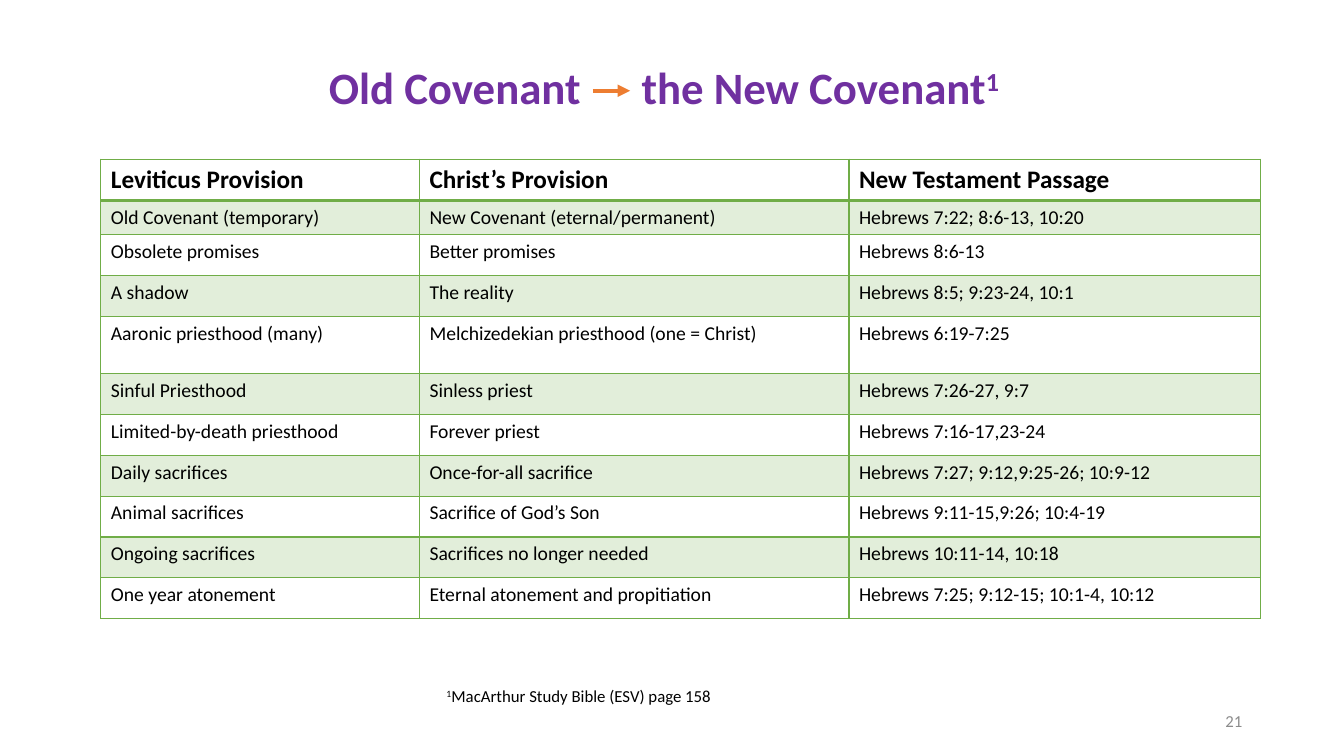
from lxml import etree
from pptx import Presentation
from pptx.dml.color import RGBColor
from pptx.enum.shapes import MSO_CONNECTOR
from pptx.enum.text import MSO_ANCHOR, MSO_AUTO_SIZE, PP_ALIGN
from pptx.oxml.ns import qn
from pptx.util import Inches, Pt

LINE = MSO_CONNECTOR.STRAIGHT
TOP, MIDDLE = MSO_ANCHOR.TOP, MSO_ANCHOR.MIDDLE
LEFT, CENTER, RIGHT = PP_ALIGN.LEFT, PP_ALIGN.CENTER, PP_ALIGN.RIGHT
FIT, FIXED = MSO_AUTO_SIZE.SHAPE_TO_FIT_TEXT, MSO_AUTO_SIZE.NONE

GREEN, PURPLE, ORANGE = "70AD47", "7030A0", "ED7D31"
BLACK, GRAY = "000000", "8C8C8C"

TITLE = {"size": Pt(32), "bold": True, "name": "Calibri"}
HEAD = {"size": Pt(18), "bold": True, "name": "Calibri"}
BODY = {"size": Pt(14), "bold": False, "name": "Calibri"}
SMALL = {"size": Pt(12), "bold": False, "name": "Calibri"}
RAISED = {"baseline": "30000"}
WIDE = {"spc": "3600"}

ROWS = [
    ("Leviticus Provision", "Christ’s Provision", "New Testament Passage"),
    ("Old Covenant (temporary)", "New Covenant (eternal/permanent)",
     "Hebrews 7:22; 8:6-13, 10:20"),
    ("Obsolete promises", "Better promises", "Hebrews 8:6-13"),
    ("A shadow", "The reality", "Hebrews 8:5; 9:23-24, 10:1"),
    ("Aaronic priesthood (many)", "Melchizedekian priesthood (one = Christ)",
     "Hebrews 6:19-7:25"),
    ("Sinful Priesthood", "Sinless priest", "Hebrews 7:26-27, 9:7"),
    ("Limited-by-death priesthood", "Forever priest", "Hebrews 7:16-17,23-24"),
    ("Daily sacrifices", "Once-for-all sacrifice",
     "Hebrews 7:27; 9:12,9:25-26; 10:9-12"),
    ("Animal sacrifices", "Sacrifice of God’s Son",
     "Hebrews 9:11-15,9:26; 10:4-19"),
    ("Ongoing sacrifices", "Sacrifices no longer needed",
     "Hebrews 10:11-14, 10:18"),
    ("One year atonement", "Eternal atonement and propitiation",
     "Hebrews 7:25; 9:12-15; 10:1-4, 10:12"),
]
WIDTHS = (3.16, 4.26, 4.08)
HEIGHT = 4.56
SPECIAL = {0: 0.41, 1: 0.34, 4: 0.57}


def paint(color, value):
    """Set a colour from a hex string."""
    color.rgb = RGBColor.from_string(value)


def add_run(para, text, style, color, extra=None):
    """Add one styled run to a paragraph."""
    run = para.add_run()
    run.text = text
    for key, value in style.items():
        setattr(run.font, key, value)
    paint(run.font.color, color)
    for key, value in (extra or {}).items():
        run.font._element.set(key, value)


def add_text(slide, place, runs, style, color, align=LEFT, anchor=TOP,
             size=FIXED, space=None):
    """Add a text box holding one paragraph of runs."""
    frame = slide.shapes.add_textbox(*map(Inches, place)).text_frame
    frame.word_wrap = True
    frame.auto_size = size
    frame.vertical_anchor = anchor
    para = frame.paragraphs[0]
    para.alignment = align
    para.line_spacing = space
    for text, extra in runs:
        add_run(para, text, style, color, extra)


def add_border(cell, side, points):
    """Draw one green border of a table cell."""
    props = cell._tc.get_or_add_tcPr()
    line = etree.SubElement(props, qn("a:" + side), w=str(Pt(points)))
    fill = etree.SubElement(line, qn("a:solidFill"))
    etree.SubElement(fill, qn("a:srgbClr"), val=GREEN)


def fill_cell(cell, text, row):
    """Write, frame and shade one cell of the given row."""
    style = BODY if row else HEAD
    add_run(cell.text_frame.paragraphs[0], text, style, BLACK)
    for side in ("lnL", "lnR", "lnT", "lnB"):
        thick = (row, side) in ((0, "lnB"), (1, "lnT"))
        add_border(cell, side, 2 if thick else 1)
    if row % 2:
        cell.fill.solid()
        paint(cell.fill.fore_color, GREEN)
        shade = cell._tc.tcPr.find(qn("a:solidFill"))[0]
        etree.SubElement(shade, qn("a:alpha"), val="20000")
    else:
        cell.fill.background()


def add_grid(slide):
    """Add the table of provisions and passages."""
    place = map(Inches, (1, 1.58, sum(WIDTHS), HEIGHT))
    table = slide.shapes.add_table(len(ROWS), len(WIDTHS), *place).table
    table.first_row = table.horz_banding = False
    for column, width in zip(table.columns, WIDTHS):
        column.width = Inches(width)
    rest = (HEIGHT - sum(SPECIAL.values())) / (len(ROWS) - len(SPECIAL))
    for row, texts in enumerate(ROWS):
        table.rows[row].height = Inches(SPECIAL.get(row, rest))
        for col, text in enumerate(texts):
            fill_cell(table.cell(row, col), text, row)


def add_arrow(slide, start, end):
    """Add an orange arrow between two points."""
    arrow = slide.shapes.add_connector(LINE, *map(Inches, start + end))
    paint(arrow.line.color, ORANGE)
    arrow.line.width = Pt(3)
    etree.SubElement(arrow.line._get_or_add_ln(), qn("a:tailEnd"),
                     type="triangle")
    etree.SubElement(arrow._element.spPr, qn("a:effectLst"))


def main():
    """Build and save the slide."""
    deck = Presentation()
    deck.slide_width, deck.slide_height = Inches(13.33), Inches(7.5)
    slide = deck.slides.add_slide(deck.slide_layouts[6])
    title = [("Old Covenant", None), (" ", WIDE),
             ("the New Covenant", None), ("1", RAISED)]
    add_text(slide, (1, 0.58, 11.17, 0.63), title, TITLE, PURPLE,
             CENTER, MIDDLE, space=0.9)
    add_grid(slide)
    add_text(slide, (9.42, 6.95, 3, 0.4), [("21", None)], SMALL, GRAY,
             RIGHT, MIDDLE)
    note = [("1", RAISED), ("MacArthur Study Bible (ESV) page 158", None)]
    add_text(slide, (4.33, 6.75, 5.25, 0.3), note, SMALL, BLACK, size=FIT)
    add_arrow(slide, (5.88, 0.9), (6.25, 0.9))
    deck.save("out.pptx")


if __name__ == "__main__":
    main()
